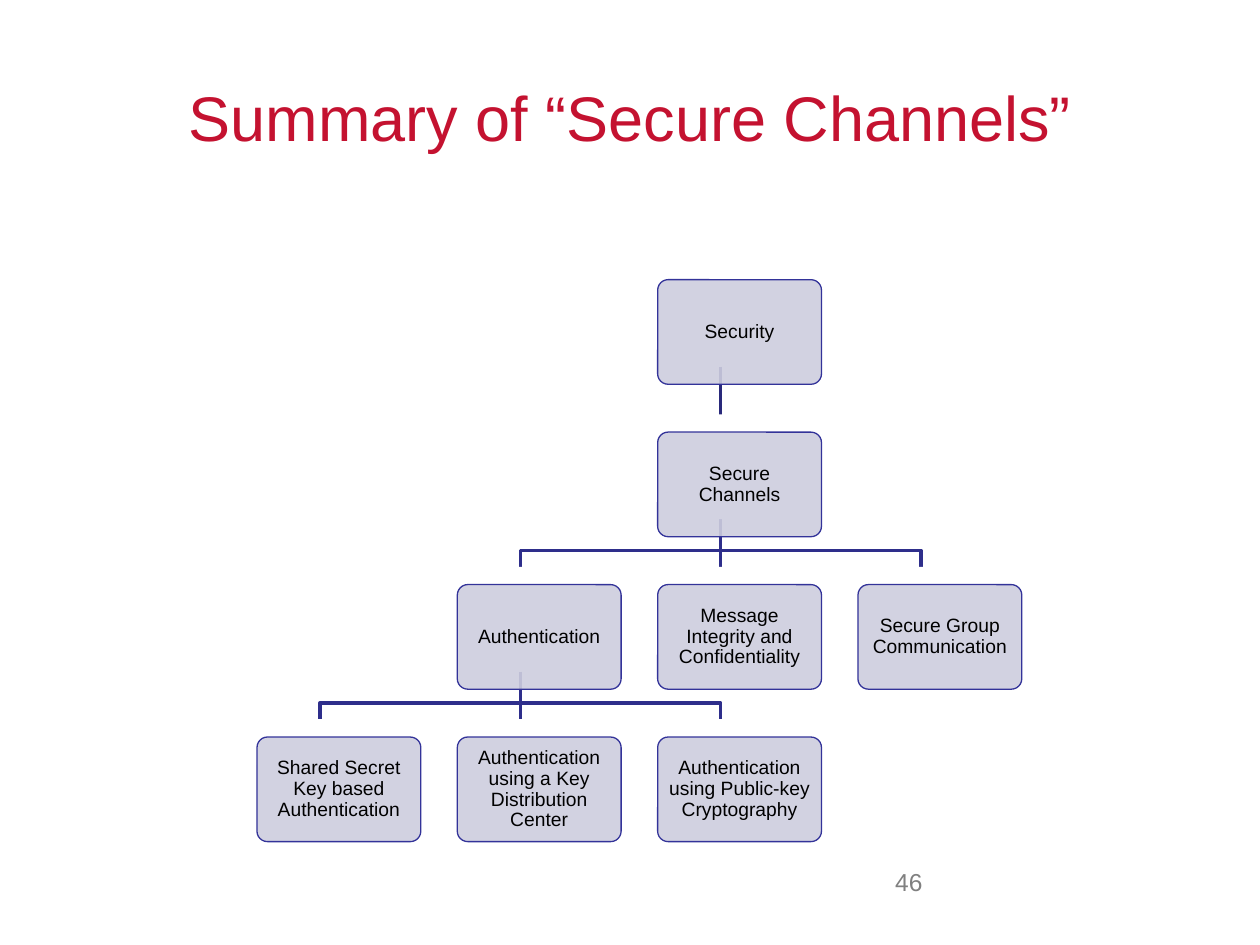
from dataclasses import dataclass
from lxml import etree
from pptx import Presentation
from pptx.dml.color import RGBColor
from pptx.enum.shapes import MSO_CONNECTOR, MSO_SHAPE
from pptx.enum.text import MSO_ANCHOR, PP_ALIGN
from pptx.oxml.ns import qn
from pptx.util import Inches, Pt


@dataclass(frozen=True)
class Theme:
    font: str = "Arial"
    title: str = "C41230"
    number: str = "808080"
    text: str = "000000"
    card: str = "CECEDE"
    border: str = "333399"
    backing: str = "FFFFFF"
    root_link: str = "29297B"
    link: str = "2E2E8B"
    title_size: int = 36
    number_size: int = 14
    card_size: int = 11


theme = Theme()


def write_text(shape, text, size, color, alignment, anchor):
    frame = shape.text_frame
    frame.word_wrap = True
    frame.vertical_anchor = anchor
    frame.text = text
    paragraph = frame.paragraphs[0]
    paragraph.alignment = alignment
    paragraph.font.name = theme.font
    paragraph.font.size = Pt(size)
    paragraph.font.color.rgb = RGBColor.from_string(color)
    return frame


def add_card(left, top, color):
    card = slide.shapes.add_shape(
        MSO_SHAPE.ROUNDED_RECTANGLE, Inches(left), Inches(top), Inches(card_width), Inches(card_height)
    )
    card.adjustments[0] = 0.1
    card.shadow.inherit = False
    card.fill.solid()
    card.fill.fore_color.rgb = RGBColor.from_string(color)
    card.line.fill.background()
    return card


presentation = Presentation()
presentation.slide_width = Inches(10)
presentation.slide_height = Inches(7.5)
slide = presentation.slides.add_slide(presentation.slide_layouts[6])

title = slide.shapes.add_textbox(Inches(0.5), Inches(0.3), Inches(9), Inches(1.25))
write_text(title, "Summary of “Secure Channels”", theme.title_size, theme.title, PP_ALIGN.CENTER, MSO_ANCHOR.MIDDLE)

card_width, card_height = 1.3, 0.83
grid_left, grid_top = 1.89, 2.08
column_step, row_step = 1.59, 1.21
card_shift_x, card_shift_y = 0.15, 0.14
elbow_drop = 0.25

cards = [
    ("Security", 2, 0, None),
    ("Secure Channels", 2, 1, 2),
    ("Authentication", 1, 2, 2),
    ("Shared Secret Key based Authentication", 0, 3, 1),
    ("Authentication using a Key Distribution Center", 1, 3, 1),
    ("Authentication using Public-key Cryptography", 2, 3, 1),
    ("Message Integrity and Confidentiality", 2, 2, 2),
    ("Secure Group Communication", 3, 2, 2),
]

for text, column, row, parent_column in cards[1:]:
    end_x = Inches(grid_left + column * column_step + card_width / 2)
    start_x = Inches(grid_left + parent_column * column_step + card_width / 2)
    end_y = Inches(grid_top + row * row_step)
    start_y = Inches(grid_top + (row - 1) * row_step + card_height)
    if column == parent_column:
        link = slide.shapes.add_connector(MSO_CONNECTOR.STRAIGHT, start_x, start_y, end_x, end_y)
        etree.SubElement(link.element.spPr, qn("a:effectLst"))
    else:
        turn_y = start_y + Inches(elbow_drop)
        builder = slide.shapes.build_freeform(start_x, start_y)
        builder.add_line_segments([(start_x, turn_y), (end_x, turn_y), (end_x, end_y)], close=False)
        link = builder.convert_to_shape()
        link.fill.background()
        link.shadow.inherit = False
    link.line.color.rgb = RGBColor.from_string(theme.root_link if row == 1 else theme.link)
    link.line.width = Pt(2)

for text, column, row, parent_column in cards:
    left = grid_left + column * column_step
    top = grid_top + row * row_step
    if parent_column is not None:
        add_card(left, top, theme.backing)
    card = add_card(left + card_shift_x, top + card_shift_y, theme.card)
    color = card.element.spPr.find(qn("a:solidFill"))[0]
    etree.SubElement(color, qn("a:alpha"), val="90000")
    card.line.color.rgb = RGBColor.from_string(theme.border)
    card.line.width = Pt(0.75)
    frame = write_text(card, text, theme.card_size, theme.text, PP_ALIGN.CENTER, MSO_ANCHOR.MIDDLE)
    frame.margin_left = frame.margin_right = Inches(0.05)
    frame.margin_top = frame.margin_bottom = Inches(0.05)
    frame.paragraphs[0].line_spacing = 0.9

number = slide.shapes.add_textbox(Inches(6.5), Inches(6.83), Inches(0.92), Inches(0.52))
write_text(number, "46", theme.number_size, theme.number, PP_ALIGN.RIGHT, MSO_ANCHOR.TOP)

presentation.save("out.pptx")
